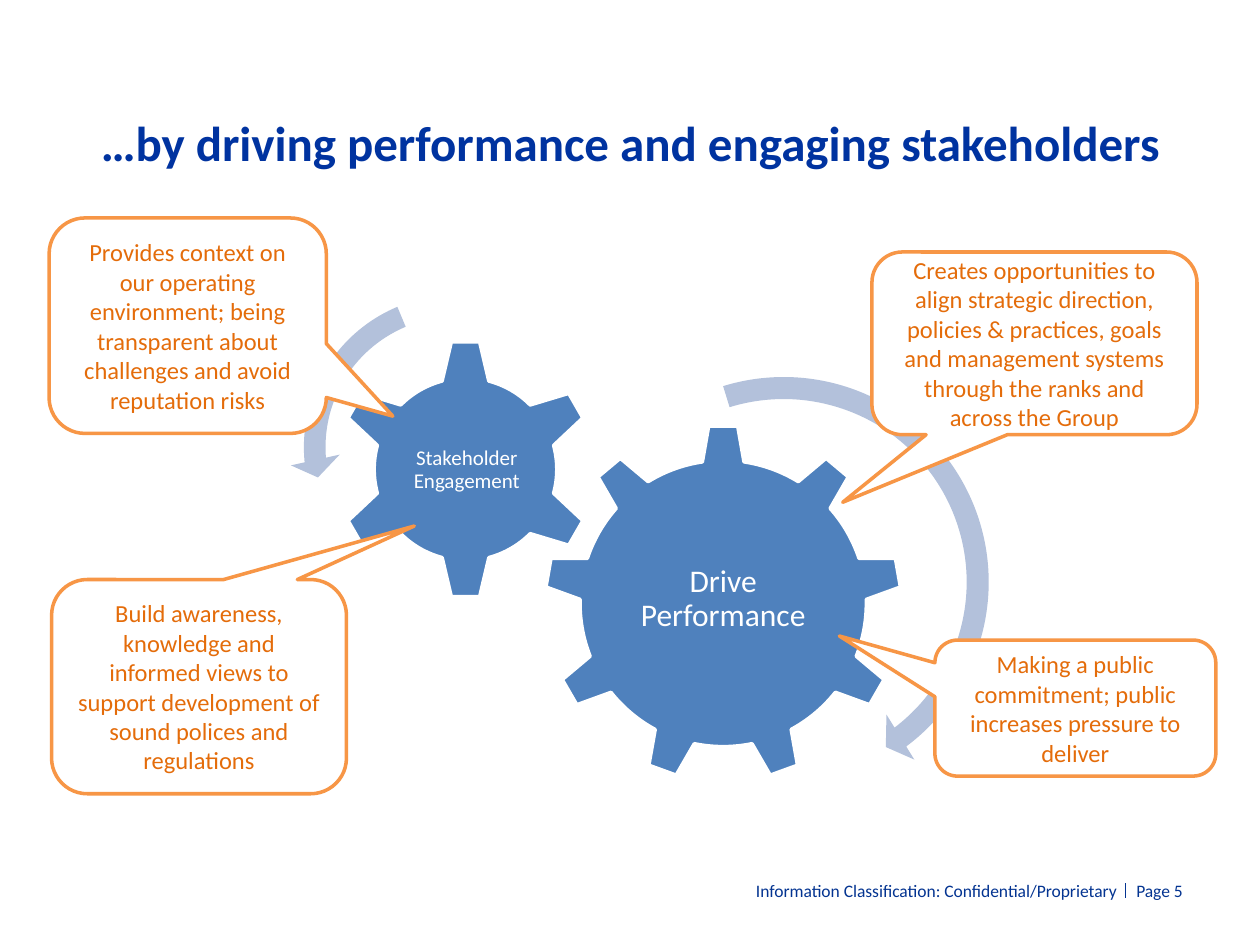
from lxml.etree import SubElement
from pptx import Presentation
from pptx.dml.color import RGBColor
from pptx.enum.shapes import MSO_CONNECTOR, MSO_SHAPE as Preset
from pptx.enum.text import MSO_ANCHOR, PP_ALIGN
from pptx.oxml.ns import qn
from pptx.util import Inches, Pt

NAVY = RGBColor(0x00, 0x33, 0xA0)
FOOTER_BLUE = RGBColor(0x04, 0x34, 0x91)
GEAR_BLUE = RGBColor(0x4F, 0x81, 0xBD)
ARROW_BLUE = RGBColor(0xB3, 0xC1, 0xDB)
ORANGE = RGBColor(0xF7, 0x96, 0x46)
DARK_ORANGE = RGBColor(0xE4, 0x6C, 0x0A)
WHITE = RGBColor(0xFF, 0xFF, 0xFF)

prs = Presentation()
prs.slide_width, prs.slide_height = Inches(10), Inches(7.5)
COL, ROW = prs.slide_width / 100, prs.slide_height / 75
slide = prs.slides.add_slide(prs.slide_layouts[5])
shapes = slide.shapes


def grid(left, top, width, height):
    """Turn columns and rows of the 100 x 75 grid into slide lengths."""
    return int(left * COL), int(top * ROW), int(width * COL), int(height * ROW)


def write(frame, words, size, color, align=PP_ALIGN.CENTER, bold=False):
    frame.vertical_anchor = MSO_ANCHOR.MIDDLE
    paragraph = frame.paragraphs[0]
    paragraph.alignment = align
    run = paragraph.add_run()
    run.text = words
    run.font.name, run.font.size, run.font.bold = "Calibri", Pt(size), bold
    run.font.color.rgb = color
    return paragraph


# Heading
heading = shapes.title
heading.left, heading.top, heading.width, heading.height = grid(6.9, 4, 86.2, 14.5)
write(heading.text_frame, "…by driving performance and engaging stakeholders", 28, NAVY, bold=True)

# Footer
for words, left, width, align in [
    ("Information Classification: Confidential/Proprietary", 58.5, 31.1, PP_ALIGN.RIGHT),
    ("Page 5", 89.2, 6.7, PP_ALIGN.LEFT),
]:
    footer = shapes.add_textbox(*grid(left, 69.3, width, 2.7)).text_frame
    footer.word_wrap = False
    write(footer, words, 10, FOOTER_BLUE, align)
x, top, _, length = grid(89.3, 70.1, 0, 1.2)
divider = shapes.add_connector(MSO_CONNECTOR.STRAIGHT, x, top, x, top + length)
divider.line.color.rgb, divider.line.width = FOOTER_BLUE, Pt(0.75)
SubElement(divider._element.spPr, qn("a:effectLst"))

# Gears, each with its label
for preset, place, label_place, words, size, inset in [
    (Preset.GEAR_9, (43.2, 33.7, 28.4, 28.4), (48.9, 40.3, 17, 14.6),
     "Drive Performance", 18, 0.03),
    (Preset.GEAR_6, (26.6, 26.9, 20.7, 20.7), (31.9, 32.2, 10.3, 10.2),
     "Stakeholder Engagement", 12, 0.02),
]:
    gear = shapes.add_shape(preset, *grid(*place))
    gear.shadow.inherit = False
    gear.fill.solid()
    gear.fill.fore_color.rgb = GEAR_BLUE
    gear.line.color.rgb, gear.line.width = WHITE, Pt(2)
    label = shapes.add_textbox(*grid(*label_place)).text_frame
    label.word_wrap = True
    label.margin_left = label.margin_right = Inches(inset)
    label.margin_top = label.margin_bottom = Inches(inset)
    write(label, words, size, WHITE).line_spacing = 0.9

# Arrows showing which way the gears turn
for preset, place, bends in [
    (Preset.CIRCULAR_ARROW, (44.7, 28.7, 35, 35), (0.05, 3.13, 31.81, 151.7, 0.06)),
    (Preset.LEFT_CIRCULAR_ARROW, (23, 22.3, 26.4, 26.4), (0.065, 4.3, 104.89, 148.38, 0.075)),
]:
    turn = shapes.add_shape(preset, *grid(*place))
    turn.shadow.inherit = False
    turn.fill.solid()
    turn.fill.fore_color.rgb = ARROW_BLUE
    turn.line.fill.background()
    for index, bend in enumerate(bends):
        turn.adjustments[index] = bend

# Callouts: place, pointer tip relative to the centre, words
for place, tip, words in [
    ((69.2, 20, 25.8, 14.5), (-0.59, 0.87),
     "Creates opportunities to align strategic direction, policies & practices, "
     "goals and management systems through the ranks and across the Group"),
    ((74.2, 50.8, 22.3, 10.8), (-0.84, -0.53),
     "Making a public commitment; public increases pressure to deliver"),
    ((4.1, 46, 23.4, 17), (0.73, -0.75),
     "Build awareness, knowledge and informed views to support development "
     "of sound polices and regulations"),
    ((3.9, 17.3, 22, 17.1), (0.74, 0.42),
     "Provides context on our operating environment; being transparent about "
     "challenges and avoid reputation risks"),
]:
    callout = shapes.add_shape(Preset.ROUNDED_RECTANGULAR_CALLOUT, *grid(*place))
    callout.shadow.inherit = False
    callout.fill.solid()
    callout.fill.fore_color.rgb = WHITE
    callout.line.color.rgb, callout.line.width = ORANGE, Pt(2)
    callout.adjustments[0], callout.adjustments[1] = tip
    write(callout.text_frame, words, 14, DARK_ORANGE)

prs.save("out.pptx")
